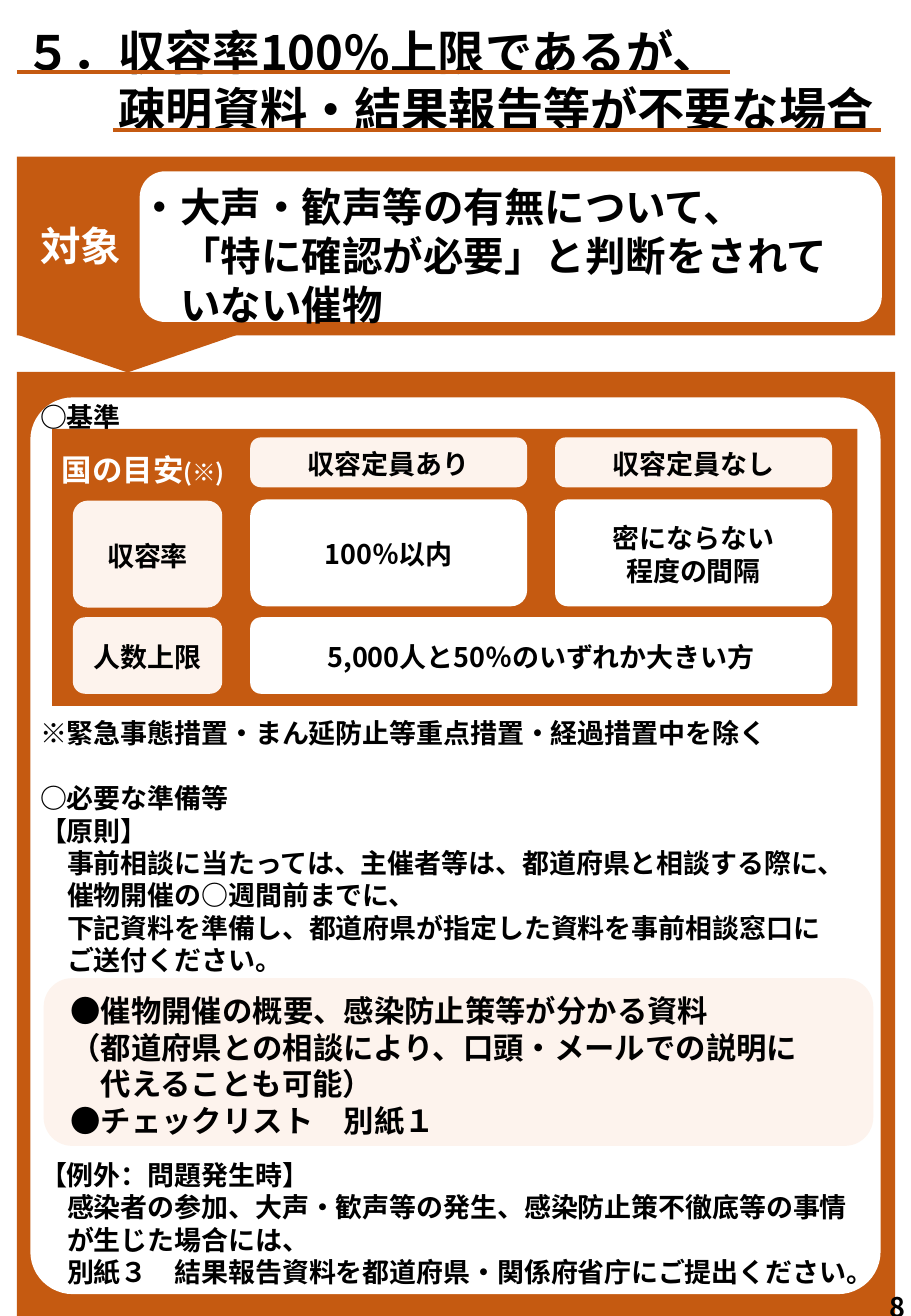
from lxml import etree
from pptx import Presentation
from pptx import util as u
from pptx.dml.color import RGBColor
from pptx.enum import shapes, text
from pptx.oxml.ns import qn

PX = 9144  # EMU in one px, 100 px to the inch
FONT = "Noto Sans CJK JP"
COLORS = {"orange": "C55A11", "cream": "FDF3ED", "white": "FFFFFF", "black": "000000"}
LINE_RATIO = 1.2
BODY_TAB = 274

# Body lines: text, size, first-line indent in characters, space before in points
BODY = [
    ("○基準", 16, 0, 0),
    ("※緊急事態措置・まん延防止等重点措置・経過措置中を除く", 16, 0, 168),
    ("○必要な準備等", 16, 0, 19.2),
    ("【原則】", 16, 0, 0),
    ("事前相談に当たっては、主催者等は、都道府県と相談する際に、", 16, 1, 0),
    ("催物開催の○週間前までに、", 16, 1, 0),
    ("下記資料を準備し、都道府県が指定した資料を事前相談窓口に", 16, 1, 0),
    ("ご送付ください。", 16, 1, 0),
    ("●催物開催の概要、感染防止策等が分かる資料", 18, 1, 9.6),
    ("（都道府県との相談により、口頭・メールでの説明に", 18, 1, 0),
    ("代えることも可能）", 18, 2, 0),
    ("●チェックリスト\t別紙１", 18, 1, 0),
    ("【例外：問題発生時】", 16, 0, 12),
    ("感染者の参加、大声・歓声等の発生、感染防止策不徹底等の事情", 16, 1, 0),
    ("が生じた場合には、", 16, 1, 0),
    ("別紙３　結果報告資料を都道府県・関係府省庁にご提出ください。", 16, 1, 0),
]

# Criteria cells: text lines, box, corner, fill
CELLS = [
    (["収容定員あり"], (206, 360, 228, 41), 0.21, "cream"),
    (["収容定員なし"], (457, 360, 228, 41), 0.21, "cream"),
    (["収容率"], (60, 412, 123, 88), 0.14, "cream"),
    (["人数上限"], (60, 508, 123, 63), 0.16, "cream"),
    (["100％以内"], (206, 411, 228, 88), 0.15, "white"),
    (["密にならない", "程度の間隔"], (457, 411, 228, 88), 0.12, "white"),
    (["5,000人と50％のいずれか大きい方"], (206, 508, 479, 63), 0.14, "white"),
]


def emu(*lengths):
    return [u.Emu(n * PX) for n in lengths]


def rgb(name):
    return RGBColor.from_string(COLORS[name])


def set_all(obj, values):
    for name, value in values.items():
        setattr(obj, name, value)


def add_run(p, words, size, color):
    r = p.add_run()
    r.text = words
    set_all(r.font, {"size": u.Pt(size), "name": FONT, "bold": True})
    r.font.color.rgb = rgb(color)
    etree.SubElement(r.font._element, qn("a:ea")).set("typeface", FONT)


def write(tf, lines, color="black", align=text.PP_ALIGN.LEFT,
          anchor=text.MSO_ANCHOR.TOP, top=0):
    """Fill a frame with lines of (text, size, indent, space before)."""
    set_all(tf, {"word_wrap": True, "auto_size": text.MSO_AUTO_SIZE.NONE,
                 "vertical_anchor": anchor, "margin_left": 0, "margin_right": 0,
                 "margin_top": u.Emu(top * PX), "margin_bottom": 0})
    for i, (words, size, indent, before) in enumerate(lines):
        p = tf.add_paragraph() if i else tf.paragraphs[0]
        set_all(p, {"alignment": align, "line_spacing": u.Pt(size * LINE_RATIO),
                    "space_before": u.Pt(before), "space_after": u.Pt(0)})
        add_run(p, words, size, color)
        pPr = p._p.get_or_add_pPr()
        pPr.set("marL", "0")
        pPr.set("indent", str(u.Pt(size * indent)))
        etree.SubElement(pPr, qn("a:buNone"))
        if "\t" in words:
            tabs = etree.SubElement(pPr, qn("a:tabLst"))
            etree.SubElement(tabs, qn("a:tab"), pos=str(BODY_TAB * PX), algn="l")


def add_block(slide, box, fill, kind=shapes.MSO_SHAPE.RECTANGLE, corner=None, rotation=0):
    sp = slide.shapes.add_shape(kind, *emu(*box))
    sp.shadow.inherit = False
    sp.fill.solid()
    sp.fill.fore_color.rgb = rgb(fill)
    sp.line.fill.background()
    sp.rotation = rotation
    if corner is not None:
        sp.adjustments[0] = corner
    return sp


def add_round(slide, box, fill, corner):
    return add_block(slide, box, fill, shapes.MSO_SHAPE.ROUNDED_RECTANGLE, corner)


def add_text(slide, box, lines, color="black"):
    sp = slide.shapes.add_textbox(*emu(*box))
    write(sp.text_frame, lines, color)
    return sp


def add_underline(slide, x1, x2, y):
    line = slide.shapes.add_connector(shapes.MSO_CONNECTOR.STRAIGHT, *emu(x1, y, x2, y))
    line.line.width = u.Pt(2.25)
    line.line.color.rgb = rgb("orange")
    etree.SubElement(line._element.spPr, qn("a:effectLst"))


def fill_placeholder(sp, box, lines):
    set_all(sp, dict(zip(("left", "top", "width", "height"), emu(*box))))
    write(sp.text_frame, lines)


def add_criteria(slide):
    add_block(slide, (43, 353, 663, 228), "orange")
    for lines, box, corner, fill in CELLS:
        sp = add_round(slide, box, fill, corner)
        write(sp.text_frame, [(words, 16, 0, 0) for words in lines],
              align=text.PP_ALIGN.CENTER, anchor=text.MSO_ANCHOR.MIDDLE, top=2)
    guide = add_text(slide, (51, 371, 159, 30), [("国の目安", 18, 0, 0)], "white")
    add_run(guide.text_frame.paragraphs[0], "(※)", 14, "white")


def main():
    prs = Presentation()
    prs.slide_width, prs.slide_height = emu(750, 1083)
    slide = prs.slides.add_slide(prs.slide_layouts[1])
    title, body = slide.placeholders

    # Title
    fill_placeholder(title, (20, 19, 725, 96), [
        ("５．収容率100％上限であるが、", 28, 0, 0),
        ("疎明資料・結果報告等が不要な場合", 28, 2, 0)])
    add_underline(slide, 14, 601, 59)
    add_underline(slide, 93, 725, 107)

    # Target banner with its downward point
    add_block(slide, (74, 185, 62, 181), "orange", shapes.MSO_SHAPE.PENTAGON, rotation=90)
    add_block(slide, (14, 129, 723, 147), "orange")
    add_round(slide, (115, 141, 611, 124), "white", 0.17)
    add_text(slide, (33, 182, 80, 42), [("対象", 24, 0, 0)], "white")
    add_text(slide, (125 - 10, 150, 602, 122), [
        ("・大声・歓声等の有無について、", 24, 0, 0),
        ("「特に確認が必要」と判断をされて", 24, 1, 0),
        ("いない催物", 24, 1, 0)])

    # Main card and body text
    add_block(slide, (14, 306, 723, 777), "orange")
    add_round(slide, (25, 327, 700, 738), "white", 0.05)
    add_round(slide, (36, 805, 683, 138), "cream", 0.17)
    fill_placeholder(body, (33, 330, 707, 740), BODY)
    slide.shapes.element.append(body.element)

    # Criteria grid and page number
    add_criteria(slide)
    add_text(slide, (732, 1062, 18, 20), [("8", 16, 0, 0)])
    prs.save("out.pptx")


if __name__ == "__main__":
    main()
